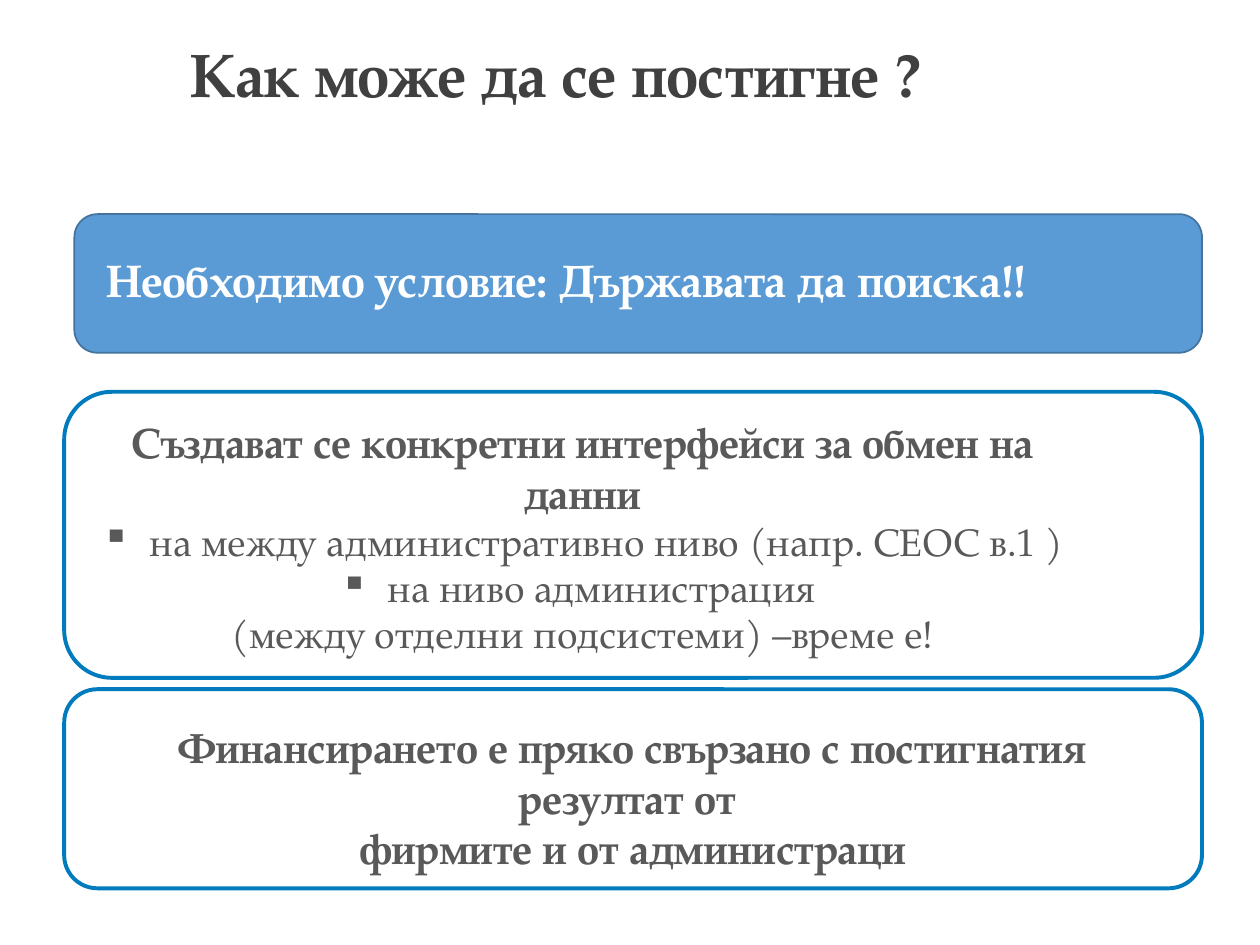
from dataclasses import dataclass

from lxml.etree import SubElement
from pptx import Presentation
from pptx.dml.color import RGBColor
from pptx.enum.shapes import MSO_SHAPE
from pptx.enum.text import MSO_ANCHOR, PP_ALIGN
from pptx.oxml.ns import qn
from pptx.slide import Slide
from pptx.util import Inches, Pt

FONT = "TeX Gyre Pagella"
COLOURS = {
    "title": "404040",
    "body": "595959",
    "white": "FFFFFF",
    "condition": "5B9BD5",
    "condition_edge": "43739E",
    "frame_edge": "007CBE",
}


@dataclass
class Area:
    left: float
    top: float
    width: float
    height: float

    def lengths(self) -> list[Inches]:
        return [Inches(side) for side in (self.left, self.top, self.width, self.height)]


@dataclass
class Panel:
    area: Area
    fill: str
    edge: str
    edge_width: float


@dataclass
class Line:
    text: str
    size: float
    bold: bool = True
    bullet: bool = False


@dataclass
class Caption:
    area: Area
    lines: list[Line]
    colour: str
    align: PP_ALIGN = PP_ALIGN.LEFT
    anchor: MSO_ANCHOR = MSO_ANCHOR.TOP
    spacing: float = 1.0


PANELS = [
    Panel(Area(0.59, 1.7, 8.95, 1.1), "condition", "condition_edge", 1),
    Panel(Area(0.51, 5.47, 9.03, 1.58), "white", "frame_edge", 2.25),
    Panel(Area(0.51, 3.11, 9.03, 2.27), "white", "frame_edge", 2.25),
]

CAPTIONS = [
    Caption(
        Area(1.41, 0.04, 8.62, 1.15),
        [Line("Как може да се постигне ?", 35)],
        "title",
        anchor=MSO_ANCHOR.MIDDLE,
        spacing=0.9,
    ),
    Caption(
        Area(0.75, 1.95, 8.35, 0.54),
        [Line("Необходимо условие: Държавата да поиска!!", 26)],
        "white",
    ),
    Caption(
        Area(1.16, 5.68, 7.72, 1.17),
        [
            Line("Финансирането е пряко свързано с постигнатия резултат от ", 24),
            Line("фирмите и от администраци", 24),
        ],
        "body",
        PP_ALIGN.CENTER,
    ),
    Caption(
        Area(0.66, 3.26, 7.93, 2.2),
        [
            Line("Създават се конкретни интерфейси за обмен на данни", 24),
            Line("на между административно ниво (напр. СЕОС в.1 )", 22, False, True),
            Line("на ниво администрация ", 22, False, True),
            Line("(между отделни подсистеми) –време е!", 22, False),
        ],
        "body",
        PP_ALIGN.CENTER,
    ),
]


def colour(name: str) -> RGBColor:
    return RGBColor.from_string(COLOURS[name])


def draw_panel(page: Slide, panel: Panel) -> None:
    shape = page.shapes.add_shape(MSO_SHAPE.ROUNDED_RECTANGLE, *panel.area.lengths())
    shape.shadow.inherit = False
    shape.fill.solid()
    shape.fill.fore_color.rgb = colour(panel.fill)
    shape.line.color.rgb = colour(panel.edge)
    shape.line.width = Pt(panel.edge_width)


def add_bullet(paragraph) -> None:
    properties = paragraph._p.get_or_add_pPr()
    properties.set("marL", str(Inches(0.38)))
    properties.set("indent", str(-Inches(0.38)))
    SubElement(properties, qn("a:buChar")).set("char", "▪")


def draw_caption(page: Slide, caption: Caption) -> None:
    frame = page.shapes.add_textbox(*caption.area.lengths()).text_frame
    frame.word_wrap = True
    frame.vertical_anchor = caption.anchor
    for index, line in enumerate(caption.lines):
        paragraph = frame.add_paragraph() if index else frame.paragraphs[0]
        paragraph.text = line.text
        if line.bullet:
            add_bullet(paragraph)
        paragraph.alignment = caption.align
        paragraph.line_spacing = caption.spacing
        paragraph.font.name = FONT
        paragraph.font.size = Pt(line.size)
        paragraph.font.bold = line.bold
        paragraph.font.color.rgb = colour(caption.colour)


def main() -> None:
    """Build the slide on how the goal can be achieved."""
    deck = Presentation()
    deck.slide_width = Inches(10)
    deck.slide_height = Inches(7.5)
    page = deck.slides.add_slide(deck.slide_layouts[6])
    for panel in PANELS:
        draw_panel(page, panel)
    for caption in CAPTIONS:
        draw_caption(page, caption)
    deck.save("out.pptx")


if __name__ == "__main__":
    main()
